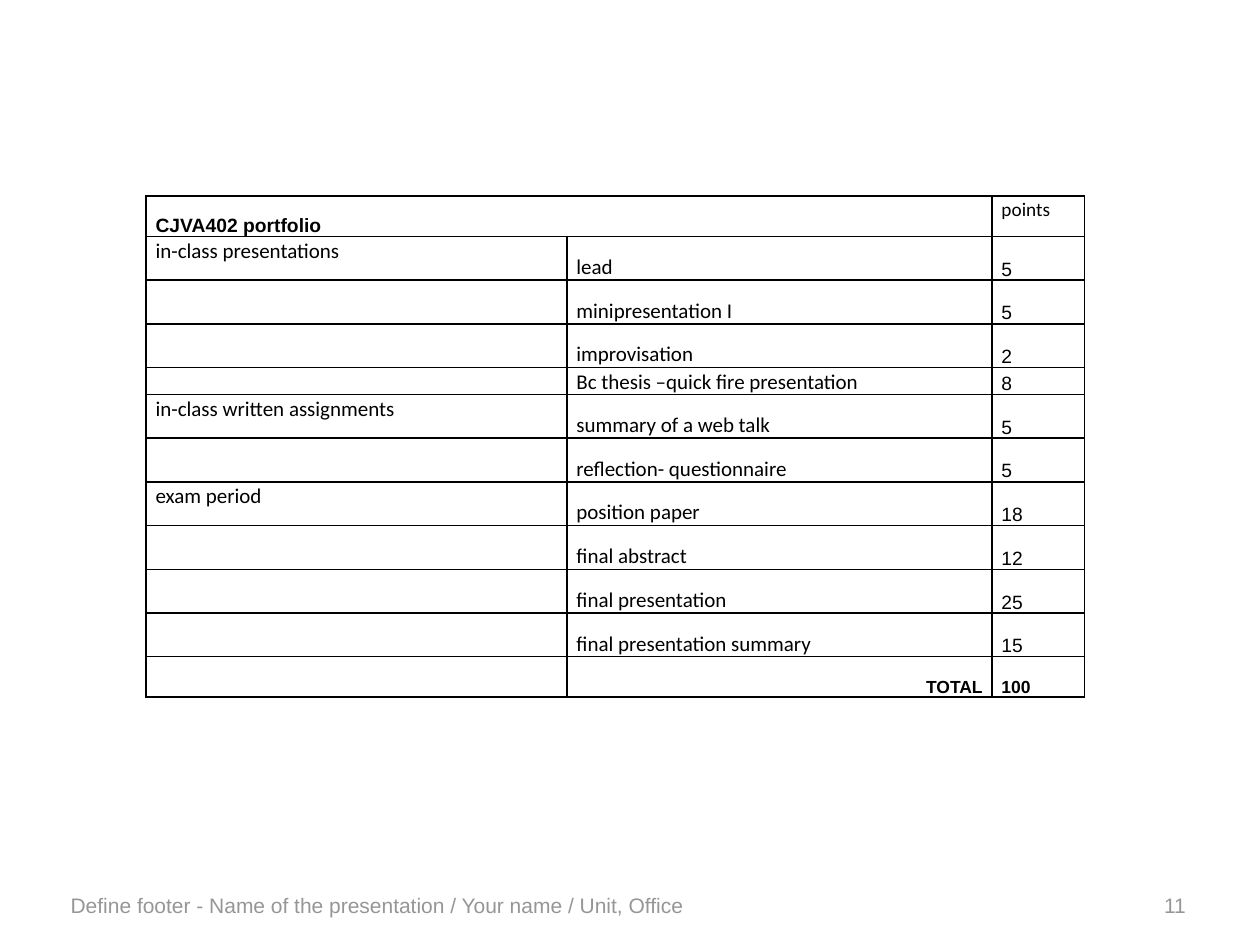
from lxml import etree
from pptx import Presentation
from pptx.dml.color import RGBColor
from pptx.enum.text import MSO_ANCHOR, PP_ALIGN
from pptx.oxml.ns import qn
from pptx.util import Pt

TOP, BOTTOM = MSO_ANCHOR.TOP, MSO_ANCHOR.BOTTOM
LEFT, RIGHT = PP_ALIGN.LEFT, PP_ALIGN.RIGHT
COLORS = {"text": "000000", "border": "000000", "footer": "969696"}

COL_WIDTHS = [240.5, 242.9, 53]
ROW_HEIGHTS = [23, 25, 25, 25, 15.4] + [25] * 6 + [23]
# Section, task, points
ASSIGNMENTS = [
    ("in-class presentations", "lead", "5"),
    ("", "minipresentation I", "5"),
    ("", "improvisation", "2"),
    ("", "Bc thesis –quick fire presentation", "8"),
    ("in-class written assignments", "summary of a web talk", "5"),
    ("", "reflection- questionnaire", "5"),
    ("exam period", "position paper", "18"),
    ("", "final abstract", "12"),
    ("", "final presentation", "25"),
    ("", "final presentation summary", "15"),
]


def set_text(p, text, size, font, color="text", bold=False, align=LEFT):
    p.text = text
    p.alignment = align
    p.font.size = Pt(size)
    p.font.name = font
    p.font.bold = bold
    p.font.color.rgb = RGBColor.from_string(COLORS[color])


def add_footer_text(s, left, width, text, align):
    sp = s.shapes.add_textbox(Pt(left), Pt(492), Pt(width), Pt(36))
    tf = sp.text_frame
    tf.word_wrap = True
    tf.vertical_anchor = BOTTOM
    set_text(tf.paragraphs[0], text, 12, "Arial", "footer", align=align)


def add_borders(cell):
    tc_pr = cell._tc.get_or_add_tcPr()
    for side in ("a:lnL", "a:lnR", "a:lnT", "a:lnB"):
        ln = etree.SubElement(tc_pr, qn(side), w=str(Pt(1)))
        fill = etree.SubElement(ln, qn("a:solidFill"))
        etree.SubElement(fill, qn("a:srgbClr"), val=COLORS["border"])


def format_cell(cell):
    add_borders(cell)
    cell.fill.background()
    cell.margin_left = cell.margin_right = Pt(5.4)
    cell.margin_top = cell.margin_bottom = 0


def fill_cell(cell, text, size, font, anchor=BOTTOM, **style):
    p = cell.text_frame.paragraphs[0]
    if text:
        cell.vertical_anchor = anchor
        p.line_spacing = 1.07
        set_text(p, text, size, font, **style)
    else:
        # Keeps an empty cell from stretching its row
        etree.SubElement(p._p, qn("a:endParaRPr"), sz=str(size * 100))


def add_portfolio_table(s):
    frame = s.shapes.add_table(len(ROW_HEIGHTS), len(COL_WIDTHS), Pt(83.5), Pt(112.1),
                               Pt(sum(COL_WIDTHS)), Pt(sum(ROW_HEIGHTS)))
    table = frame.table
    table.first_row = table.horz_banding = False
    for column, width in zip(table.columns, COL_WIDTHS):
        column.width = Pt(width)
    for row, height in zip(table.rows, ROW_HEIGHTS):
        row.height = Pt(height)
    for cell in table.iter_cells():
        format_cell(cell)

    # Header row
    table.cell(0, 0).merge(table.cell(0, 1))
    fill_cell(table.cell(0, 0), "CJVA402 portfolio", 11, "Arial", bold=True)
    fill_cell(table.cell(0, 2), "points", 11, "Calibri", TOP)

    # Assignments
    for i, (section, task, points) in enumerate(ASSIGNMENTS, start=1):
        fill_cell(table.cell(i, 0), section, 12, "Calibri", TOP)
        fill_cell(table.cell(i, 1), task, 12, "Calibri")
        fill_cell(table.cell(i, 2), points, 11, "Arial")

    # Total row
    last = len(ROW_HEIGHTS) - 1
    fill_cell(table.cell(last, 0), "", 10, "Arial")
    fill_cell(table.cell(last, 1), "TOTAL", 10, "Arial", bold=True, align=RIGHT)
    fill_cell(table.cell(last, 2), "100", 10, "Arial", bold=True)


def main():
    prs = Presentation()
    prs.slide_width, prs.slide_height = Pt(720), Pt(540)
    s = prs.slides.add_slide(prs.slide_layouts[6])
    # Footer
    add_footer_text(s, 540, 144.7, "11", RIGHT)
    add_footer_text(s, 33.3, 496.8,
                    "Define footer - Name of the presentation / Your name / Unit, Office", LEFT)
    add_portfolio_table(s)
    prs.save("out.pptx")


if __name__ == "__main__":
    main()
